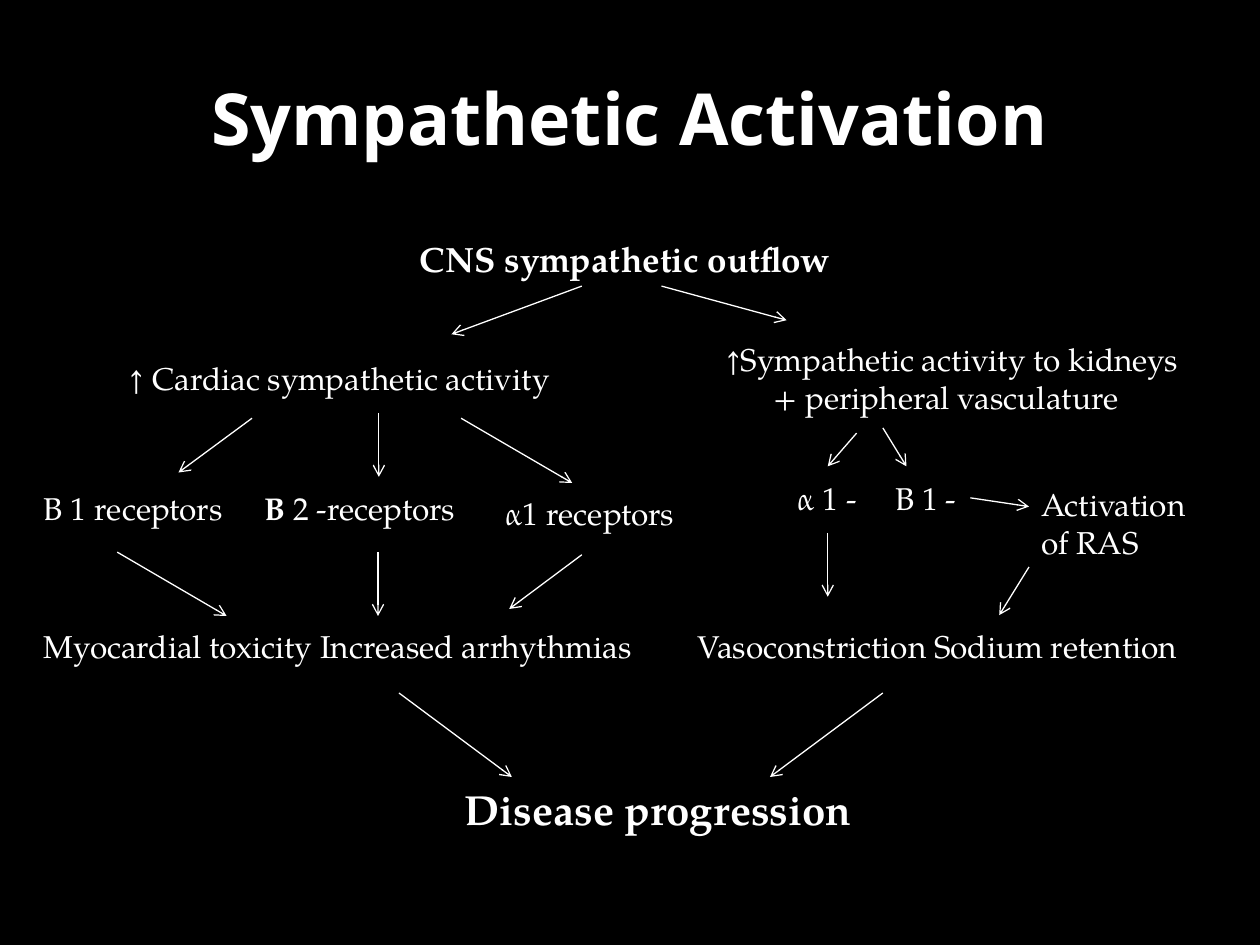
from dataclasses import dataclass

from lxml import etree
from pptx import Presentation
from pptx.dml.color import RGBColor
from pptx.enum.shapes import MSO_CONNECTOR
from pptx.enum.text import MSO_ANCHOR, MSO_AUTO_SIZE, PP_ALIGN
from pptx.oxml.ns import qn
from pptx.util import Pt

STRAIGHT = MSO_CONNECTOR.STRAIGHT
MIDDLE = MSO_ANCHOR.MIDDLE
FIT = MSO_AUTO_SIZE.SHAPE_TO_FIT_TEXT
CENTER = PP_ALIGN.CENTER


@dataclass(frozen=True)
class Theme:
    back: RGBColor = RGBColor(0, 0, 0)
    ink: RGBColor = RGBColor(255, 255, 255)
    head: str = "Open Sans"
    body: str = "TeX Gyre Pagella"
    title: float = 41
    end: float = 24
    top: float = 20
    text: float = 18
    line: float = 0.75


THEME = Theme()

# left, top, width, height, lines
LABELS = [
    (67, 201.5, 300, 29, ["↑ Cardiac sympathetic activity"]),
    (18, 276, 120, 29, ["B 1 receptors"]),
    (281.5, 278.5, 126, 29, ["α1 receptors"]),
    (448.5, 270, 52, 29, ["α 1 -"]),
    (504.5, 270, 52, 29, ["B 1 -"]),
    (588, 273.5, 120, 51, ["Activation", "of RAS"]),
    (18, 355, 360, 29, ["Myocardial toxicity Increased arrhythmias"]),
    (391.5, 355, 360, 29, ["Vasoconstriction Sodium retention"]),
]

# start x, start y, end x, end y
ARROWS = [
    # outflow to heart, kidneys and vessels
    (332.5, 163.5, 258, 191), (378, 163.5, 449.5, 183),
    # activity to receptors
    (144, 239, 102, 270), (216.5, 236, 216.5, 272.5), (263.5, 239, 327, 276),
    (489.5, 247.5, 473, 266.5), (504.5, 244.5, 518, 266.5),
    (554.5, 284.5, 588, 289.5),
    # receptors to effects
    (67, 315.5, 129.5, 352), (216, 315.5, 216, 352), (332.5, 317, 291, 348),
    (473, 304.5, 473, 341), (588, 324, 571, 351.5),
    # effects to disease
    (228, 396, 292.5, 444), (504.5, 396, 440, 444),
]


def style(font, size, bold=False, face=THEME.body):
    font.name = face
    font.size = Pt(size)
    font.bold = bold
    font.color.rgb = THEME.ink


def add_box(slide, x, y, w, h):
    box = slide.shapes.add_textbox(Pt(x), Pt(y), Pt(w), Pt(h))
    box.text_frame.word_wrap = True
    return box.text_frame


def add_title(slide, text):
    frame = add_box(slide, 36, 21.6, 648, 90)
    frame.vertical_anchor = MIDDLE
    para = frame.paragraphs[0]
    para.text = text
    para.alignment = CENTER
    style(para.font, THEME.title, True, THEME.head)


def add_label(slide, x, y, w, h, lines, size=THEME.text, bold=False):
    frame = add_box(slide, x, y, w, h)
    frame.auto_size = FIT
    frame.text = "\n".join(lines)
    for para in frame.paragraphs:
        style(para.font, size, bold)
    return frame


def add_arrow(slide, x1, y1, x2, y2):
    arrow = slide.shapes.add_connector(STRAIGHT, Pt(x1), Pt(y1), Pt(x2), Pt(y2))
    arrow.line.color.rgb = THEME.ink
    arrow.line.width = Pt(THEME.line)
    props = arrow.line._get_or_add_ln()
    etree.SubElement(props, qn("a:tailEnd"), type="arrow")
    etree.SubElement(arrow._element.spPr, qn("a:effectLst"))


def main():
    deck = Presentation()
    deck.slide_width, deck.slide_height = Pt(720), Pt(540)
    slide = deck.slides.add_slide(deck.slide_layouts[6])
    fill = slide.background.fill
    fill.solid()
    fill.fore_color.rgb = THEME.back

    add_title(slide, "Sympathetic Activation")
    add_label(slide, 232.8, 132, 276, 32, ["CNS sympathetic outflow"],
              THEME.top, True)
    for label in LABELS:
        add_label(slide, *label)

    kidney = add_label(slide, 408, 191, 300, 51,
                       ["↑Sympathetic activity to kidneys",
                        "+ peripheral vasculature"])
    indent = kidney.paragraphs[1]._p.get_or_add_pPr()
    indent.set("marL", str(Pt(27)))

    beta = add_label(slide, 144, 276, 174, 29, ["B "]).paragraphs[0]
    beta.runs[0].font.bold = True
    beta.add_run().text = "2 -receptors"

    add_label(slide, 258.5, 444, 266, 36, ["Disease progression"],
              THEME.end, True)
    for arrow in ARROWS:
        add_arrow(slide, *arrow)
    deck.save("out.pptx")


if __name__ == "__main__":
    main()
